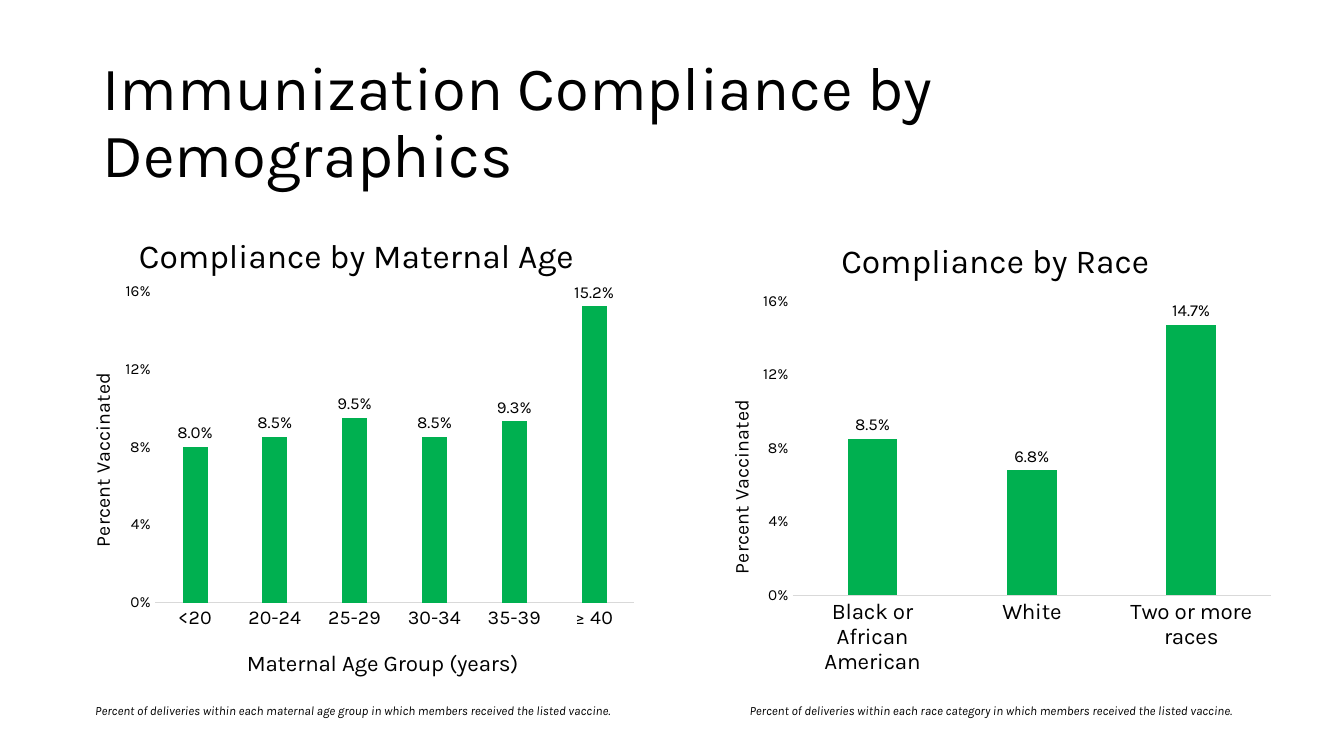
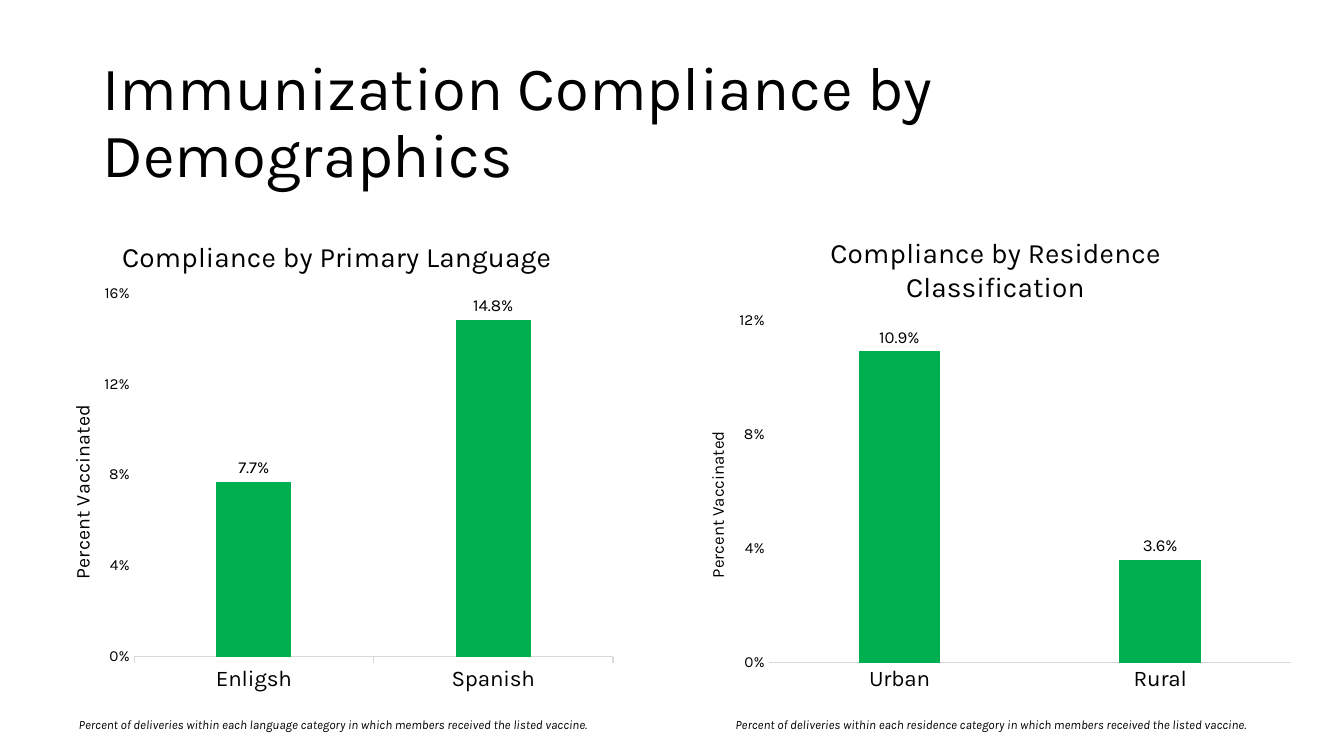
from dataclasses import dataclass
from typing import Optional

from lxml.etree import SubElement
from pptx import Presentation
from pptx.chart.data import CategoryChartData
from pptx.dml.color import RGBColor
from pptx.enum.chart import XL_CHART_TYPE as ChartType
from pptx.enum.chart import XL_LABEL_POSITION as LabelPosition
from pptx.enum.chart import XL_TICK_MARK as TickMark
from pptx.enum.text import MSO_ANCHOR as Anchor
from pptx.enum.text import PP_ALIGN as Align
from pptx.oxml.ns import qn
from pptx.util import Cm, Pt

FONT = "Karla"
BLACK, GREEN, AXIS_GREY = "000000", "00B050", "D9D9D9"
HEADING = "Immunization Compliance by Demographics"
CHART_TOP = 5.26
COLUMN_WIDTH = 14.73


@dataclass(frozen=True)
class Box:
    """A place on the slide in centimetres."""
    left: float
    top: float
    width: float = 0
    height: float = 0


@dataclass(frozen=True)
class Panel:
    """One compliance chart with its footnote."""
    group: str
    title: str
    rates: dict[str, float]
    frame: Box
    plot: Box
    title_at: Box
    percent_at: Box
    note_left: float
    top_rate: float = 0.16
    title_size: int = 24
    percent_size: int = 14
    category_size: int = 16
    category_tick: TickMark = TickMark.NONE
    category_title: str = ""
    category_title_at: Optional[Box] = None


@dataclass(frozen=True)
class Page:
    """A slide with its panels and footnote height."""
    note_top: float
    panels: tuple[Panel, ...]


PAGES = (
    Page(17.58, (
        Panel("maternal age group", "Compliance by Maternal Age",
              {"<20": 0.08, "20-24": 0.085, "25-29": 0.095,
               "30-34": 0.085, "35-39": 0.093, "≥ 40": 0.152},
              Box(1.52, CHART_TOP, COLUMN_WIDTH, 12.19),
              Box(3.91, 7.33, 12.07, 7.86), Box(3.35, 5.75), Box(2.17, 9.3),
              note_left=1.52, category_size=14,
              category_title="Maternal Age Group (years)",
              category_title_at=Box(6.12, 16.25)),
        Panel("race category", "Compliance by Race",
              {"Black or African American": 0.085, "White": 0.068,
               "Two or more races": 0.147},
              Box(17.6, CHART_TOP, COLUMN_WIDTH, 11.99),
              Box(19.98, 7.59, 12.05, 7.41), Box(21.05, 5.87), Box(18.27, 9.98),
              note_left=17.6),
    )),
    Page(17.93, (
        Panel("language category", "Compliance by Primary Language",
              {"Enligsh": 0.077, "Spanish": 0.148},
              Box(1.02, CHART_TOP, COLUMN_WIDTH, 12.45),
              Box(3.38, 7.38, 12.07, 9.17), Box(2.95, 5.87), Box(1.66, 10.11),
              note_left=1.02, title_size=20, category_tick=TickMark.OUTSIDE),
        Panel("residence category", "Compliance by Residence Classification",
              {"Urban": 0.109, "Rural": 0.036},
              Box(17.09, CHART_TOP, 15.75, 12.45),
              Box(19.38, 8.06, 13.15, 8.64), Box(20.8, 5.77), Box(17.72, 10.79),
              note_left=17.6, top_rate=0.12, title_size=20, percent_size=12),
    )),
)


def colour(hex_code: str) -> RGBColor:
    """Turn a hex string into a colour."""
    return RGBColor.from_string(hex_code)


def style_font(font, size: float, italic: Optional[bool] = None) -> None:
    """Apply the shared typeface and text colour."""
    font.name, font.size = FONT, Pt(size)
    font.bold, font.italic = False, italic
    font.color.rgb = colour(BLACK)


def add_run(paragraph, text: str, size: float, italic: Optional[bool] = None) -> None:
    """Append a styled run to a paragraph."""
    run = paragraph.add_run()
    run.text = text
    style_font(run.font, size, italic)


def add_text(slide, box: Box, text: str, size: float, italic: Optional[bool] = None):
    """Add a wrapping text box and return its frame."""
    frame = slide.shapes.add_textbox(
        Cm(box.left), Cm(box.top), Cm(box.width), Cm(box.height)).text_frame
    frame.word_wrap = True
    add_run(frame.paragraphs[0], text, size, italic)
    return frame


def place(part, box: Box, frame: Box) -> None:
    """Fix a chart part at a slide position inside the chart frame."""
    for old in part.findall(qn("c:layout")):
        part.remove(old)
    layout = SubElement(part, qn("c:layout"))
    part.insert(0 if part.find(qn("c:tx")) is None else 1, layout)
    manual = SubElement(layout, qn("c:manualLayout"))
    settings = {"xMode": "edge", "yMode": "edge",
                "x": (box.left - frame.left) / frame.width,
                "y": (box.top - frame.top) / frame.height}
    if box.width:
        settings = {"layoutTarget": "inner", **settings,
                    "w": box.width / frame.width, "h": box.height / frame.height}
    for tag, value in settings.items():
        SubElement(manual, qn(f"c:{tag}")).set("val", str(value))


def write_title(title, text: str, size: float, box: Box, frame: Box) -> None:
    """Fill and place a chart or axis title."""
    add_run(title.text_frame.paragraphs[0], text, size)
    place(title._element, box, frame)


def style_category_axis(axis, panel: Panel) -> None:
    """Format the group axis and its optional title."""
    axis.major_tick_mark, axis.minor_tick_mark = panel.category_tick, TickMark.NONE
    axis.has_major_gridlines = False
    style_font(axis.tick_labels.font, panel.category_size)
    axis.format.line.color.rgb = colour(AXIS_GREY)
    axis.format.line.width = Pt(0.75)
    if panel.category_title_at:
        write_title(axis.axis_title, panel.category_title, 16,
                    panel.category_title_at, panel.frame)


def style_percent_axis(axis, panel: Panel) -> None:
    """Format the percent axis and its rotated title."""
    axis.minimum_scale, axis.maximum_scale = 0, panel.top_rate
    axis.major_unit = 0.04
    axis.has_major_gridlines = False
    axis.major_tick_mark = axis.minor_tick_mark = TickMark.NONE
    axis.format.line.fill.background()
    style_font(axis.tick_labels.font, 11)
    axis.tick_labels.number_format = "0%"
    axis.tick_labels.number_format_is_linked = False
    write_title(axis.axis_title, "Percent Vaccinated", panel.percent_size,
                panel.percent_at, panel.frame)
    body = axis.axis_title.text_frame._txBody.find(qn("a:bodyPr"))
    body.set("rot", "-5400000")
    body.set("vert", "horz")


def style_columns(columns) -> None:
    """Format the columns and their value labels."""
    columns.gap_width, columns.overlap = 219, -27
    columns.vary_by_categories = False
    fill = columns.series[0].format.fill
    fill.solid()
    fill.fore_color.rgb = colour(GREEN)
    labels = columns.series[0].data_labels
    labels.show_value = True
    labels.position = LabelPosition.OUTSIDE_END
    labels.number_format, labels.number_format_is_linked = "0.0%", False
    style_font(labels.font, 12)


def add_panel(slide, panel: Panel, note_top: float) -> None:
    """Draw one chart and its footnote."""
    rates = CategoryChartData(number_format="0.0%")
    rates.categories = list(panel.rates)
    rates.add_series("Series 1", list(panel.rates.values()))
    frame = panel.frame
    chart = slide.shapes.add_chart(
        ChartType.COLUMN_CLUSTERED, Cm(frame.left), Cm(frame.top),
        Cm(frame.width), Cm(frame.height), rates).chart
    style_font(chart.font, 10)
    chart.has_legend = False
    write_title(chart.chart_title, panel.title, panel.title_size, panel.title_at, frame)
    style_category_axis(chart.category_axis, panel)
    style_percent_axis(chart.value_axis, panel)
    style_columns(chart.plots[0])
    place(chart._chartSpace.find(f".//{qn('c:plotArea')}"), panel.plot, frame)
    note = add_text(slide, Box(panel.note_left, note_top, COLUMN_WIDTH, 0.64),
                    f"Percent of deliveries within each {panel.group} "
                    "in which members received the listed vaccine.", 9, True)
    note.paragraphs[0].alignment = Align.CENTER


def add_page(deck, page: Page) -> None:
    """Draw one slide with the shared heading."""
    slide = deck.slides.add_slide(deck.slide_layouts[6])
    heading = add_text(slide, Box(2.34, 1.55, 29.21, 3.15), HEADING, 44)
    heading.vertical_anchor = Anchor.MIDDLE
    heading.paragraphs[0].line_spacing = 0.9
    for panel in page.panels:
        add_panel(slide, panel, page.note_top)


def main() -> None:
    """Build and save the deck."""
    deck = Presentation()
    deck.slide_width, deck.slide_height = Cm(33.87), Cm(19.05)
    for page in PAGES:
        add_page(deck, page)
    deck.save("out.pptx")


if __name__ == "__main__":
    main()
